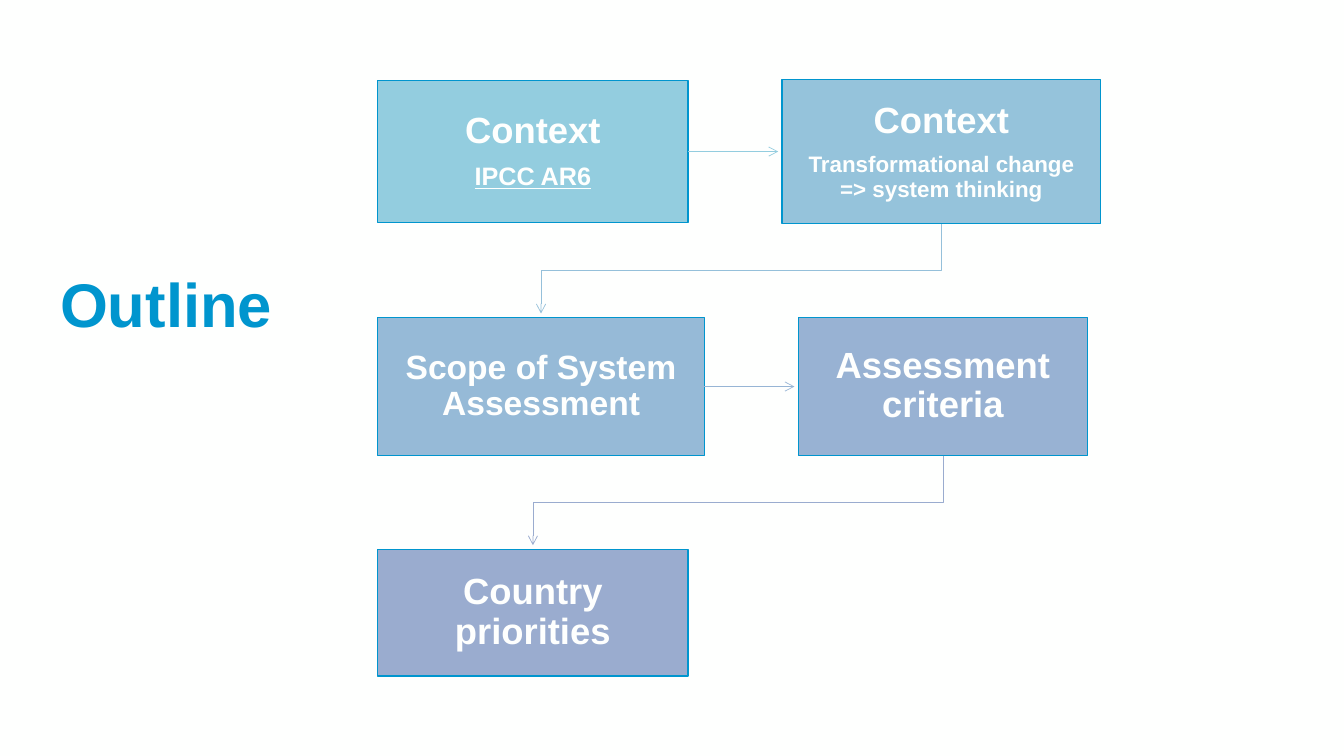
from lxml import etree
from pptx import Presentation
from pptx.dml.color import RGBColor
from pptx.enum.shapes import MSO_CONNECTOR, MSO_SHAPE
from pptx.enum.text import MSO_ANCHOR, PP_ALIGN
from pptx.oxml.ns import qn
from pptx.util import Cm, Pt

RECTANGLE = MSO_SHAPE.RECTANGLE
STRAIGHT = MSO_CONNECTOR.STRAIGHT
MIDDLE, BOTTOM = MSO_ANCHOR.MIDDLE, MSO_ANCHOR.BOTTOM
CENTER = PP_ALIGN.CENTER

WHITE = "FEFFFE"
BLUE = "0095CE"
ARROW_GAP = Cm(0.1)

# left, top, width, height in cm; fill; paragraphs as (text, size, underlined)
STEPS = {
    "ipcc": ((9.52, 2.03, 7.82, 3.58), "93CDDF",
             [("Context", 26, False), ("IPCC AR6", 18, True)]),
    "change": ((19.71, 2.01, 8.03, 3.63), "95C3DB",
               [("Context", 26, False),
                ("Transformational change => system thinking", 16, False)]),
    "scope": ((9.52, 8, 8.23, 3.48), "96BAD7",
              [("Scope of System Assessment", 24, False)]),
    "criteria": ((20.12, 8, 7.29, 3.48), "98B2D3",
                 [("Assessment criteria", 26, False)]),
    "priorities": ((9.52, 13.84, 7.82, 3.2), "9AACCF",
                   [("Country priorities", 26, False)]),
}


def color(hex_value):
    return RGBColor.from_string(hex_value)


def apply(target, values):
    for attribute, value in values.items():
        setattr(target, attribute, value)


def write_paragraphs(frame, paragraphs, ink, margin, anchor):
    """Fill a frame with (text, size, underlined) paragraphs, bold and centred."""
    apply(frame, {"word_wrap": True, "vertical_anchor": anchor,
                  "margin_left": margin, "margin_right": margin,
                  "margin_top": margin, "margin_bottom": margin})
    for index, (text, size, underlined) in enumerate(paragraphs):
        paragraph = frame.paragraphs[0] if index == 0 else frame.add_paragraph()
        apply(paragraph, {"alignment": CENTER, "line_spacing": 0.9})
        if index < len(paragraphs) - 1:
            paragraph.space_after = Pt(round(size * 0.35))
        run = paragraph.add_run()
        run.text = text
        apply(run.font, {"name": "Arial", "size": Pt(size), "bold": True,
                         "underline": underlined})
        run.font.color.rgb = color(ink)


def add_title(slide, text):
    title = slide.shapes.add_textbox(Cm(0), Cm(7.06), Cm(8.38), Cm(1.65))
    write_paragraphs(title.text_frame, [(text, 44, False)], BLUE, Cm(0.13), BOTTOM)


def add_step(slide, bounds, fill, paragraphs):
    step = slide.shapes.add_shape(RECTANGLE, *map(Cm, bounds))
    step.shadow.inherit = False
    step.fill.solid()
    step.fill.fore_color.rgb = color(fill)
    step.line.color.rgb = color(BLUE)
    step.line.width = Pt(1)
    write_paragraphs(step.text_frame, paragraphs, WHITE, Cm(0.5), MIDDLE)
    return step


def style_arrow(arrow, ink):
    arrow.line.color.rgb = color(ink)
    arrow.line.width = Pt(0.5)
    etree.SubElement(arrow.line._get_or_add_ln(), qn("a:tailEnd"), type="arrow")


def link_across(slide, source, target, ink):
    y = source.top + source.height // 2
    arrow = slide.shapes.add_connector(
        STRAIGHT, source.left + source.width, y, target.left - ARROW_GAP, y)
    style_arrow(arrow, ink)
    etree.SubElement(arrow._element.spPr, qn("a:effectLst"))


def link_down(slide, source, target, ink):
    """Draw an elbow arrow that turns halfway between two rows."""
    start_x = source.left + source.width // 2
    end_x = target.left + target.width // 2
    start_y = source.top + source.height
    turn_y = (start_y + target.top) // 2
    builder = slide.shapes.build_freeform(start_x, start_y)
    builder.add_line_segments(
        [(start_x, turn_y), (end_x, turn_y), (end_x, target.top - ARROW_GAP)],
        close=False)
    arrow = builder.convert_to_shape()
    arrow.shadow.inherit = False
    arrow.fill.background()
    style_arrow(arrow, ink)


def main():
    deck = Presentation()
    apply(deck, {"slide_width": Cm(33.87), "slide_height": Cm(19.05)})
    slide = deck.slides.add_slide(deck.slide_layouts[6])
    slide.background.fill.solid()
    slide.background.fill.fore_color.rgb = color(WHITE)

    add_title(slide, "Outline")
    steps = {key: add_step(slide, *content) for key, content in STEPS.items()}
    link_across(slide, steps["ipcc"], steps["change"], "93CDDF")
    link_down(slide, steps["change"], steps["scope"], "95C0DA")
    link_across(slide, steps["scope"], steps["criteria"], "97B5D5")
    link_down(slide, steps["criteria"], steps["priorities"], "9AACCF")
    deck.save("out.pptx")


if __name__ == "__main__":
    main()
